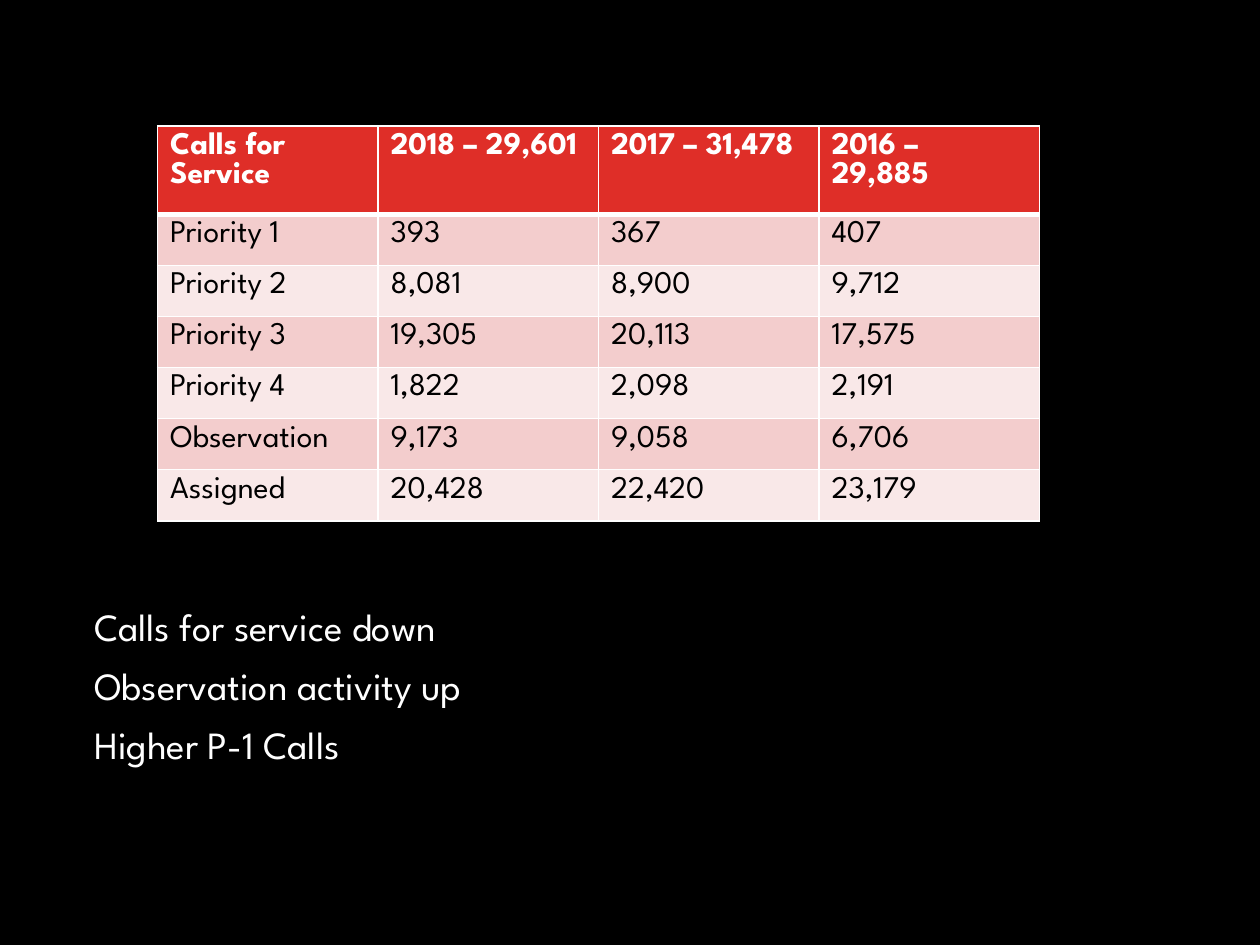
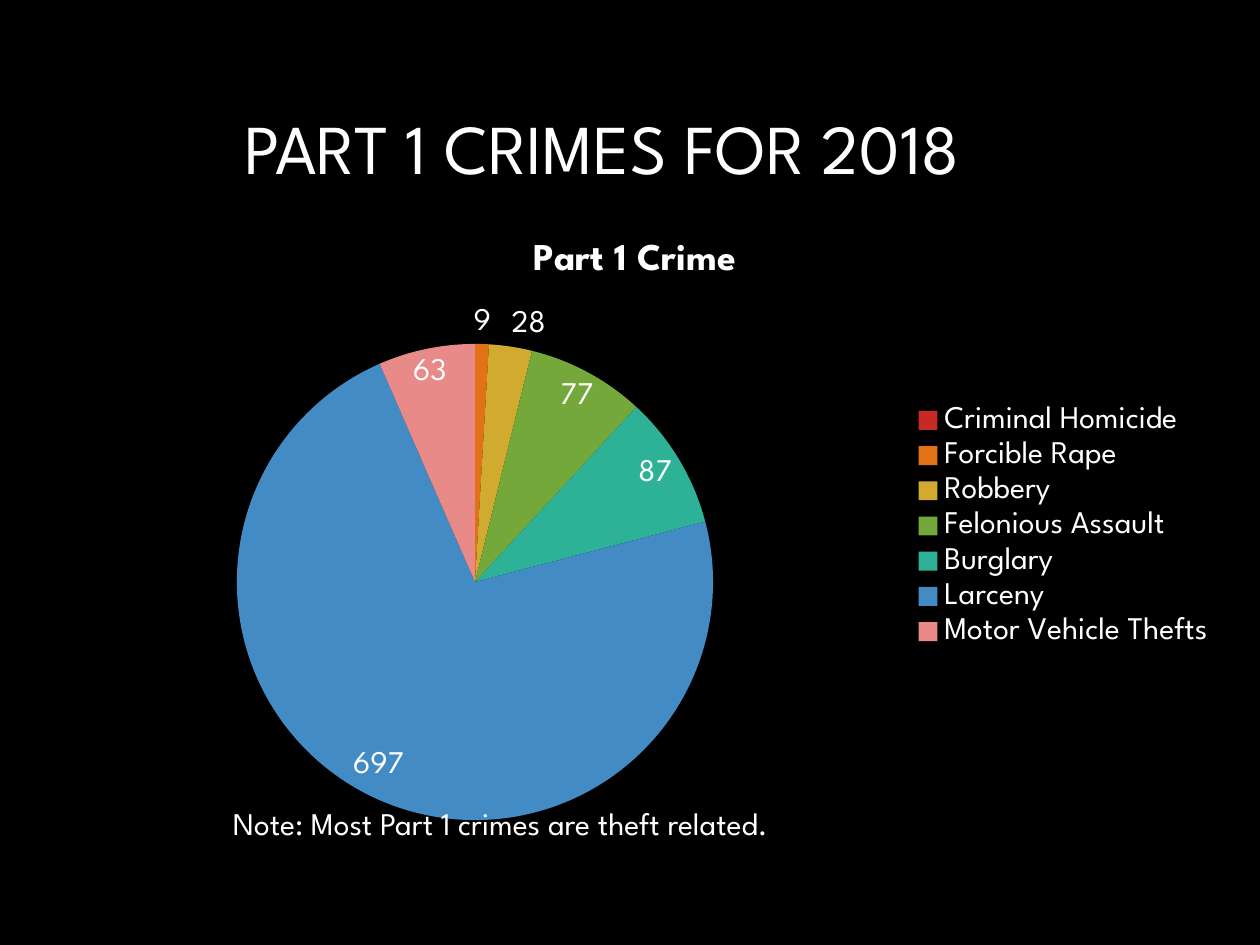
from lxml.etree import SubElement
from pptx import Presentation
from pptx.chart.data import CategoryChartData
from pptx.dml.color import RGBColor
from pptx.enum.chart import XL_CHART_TYPE, XL_LABEL_POSITION, XL_LEGEND_POSITION
from pptx.enum.text import MSO_ANCHOR, PP_ALIGN
from pptx.oxml import parse_xml
from pptx.oxml.ns import nsdecls, qn
from pptx.util import Inches, Pt

FACE = "League Spartan"
BLACK, WHITE, RED = "000000", "FFFFFF", "DF2E28"
BANDS = ["F3CDCD", "F9E8E8"]


def tint(hex):
    return RGBColor.from_string(hex)


def write(frame, text, size=18, color=WHITE, bold=False, align=PP_ALIGN.LEFT,
          line=None, gap=0, anchor=MSO_ANCHOR.TOP):
    frame.word_wrap = True
    frame.vertical_anchor = anchor
    for i, words in enumerate(text.split("\n")):
        para = frame.paragraphs[0] if i == 0 else frame.add_paragraph()
        para.alignment = align
        if line:
            para.line_spacing = line
        if i and gap:
            para.space_before = Pt(gap)
        run = para.add_run()
        run.text = words
        font = run.font
        font.name, font.size, font.bold = FACE, Pt(size), bold
        font.color.rgb = tint(color)


deck = Presentation()
deck.slide_width, deck.slide_height = Inches(10), Inches(7.5)

# Two black slides
pages = []
for _ in range(2):
    page = deck.slides.add_slide(deck.slide_layouts[6])
    page.background.fill.solid()
    page.background.fill.fore_color.rgb = tint(BLACK)
    pages.append(page)
calls, crimes = pages

# Calls for service: remarks
box = calls.shapes.add_textbox(Inches(0.65), Inches(4.78), Inches(8.7), Inches(2.07))
write(box.text_frame,
      "Calls for service down\nObservation activity up\nHigher P-1 Calls",
      size=22, line=0.9, gap=10)

# Calls for service: table, whose header row grows to two lines
rows = [
    ["Calls for Service", "2018 – 29,601", "2017 – 31,478", "2016 –\n29,885"],
    ["Priority 1", "393", "367", "407"],
    ["Priority 2", "8,081", "8,900", "9,712"],
    ["Priority 3", "19,305", "20,113", "17,575"],
    ["Priority 4", "1,822", "2,098", "2,191"],
    ["Observation", "9,173", "9,058", "6,706"],
    ["Assigned", "20,428", "22,420", "23,179"],
]
ROW = Pt(29.2)
table = calls.shapes.add_table(len(rows), 4, Inches(1.25), Inches(1), Inches(7),
                               ROW * len(rows)).table
for r, row in enumerate(rows):
    table.rows[r].height = ROW
    for c, words in enumerate(row):
        cell = table.cell(r, c)
        write(cell.text_frame, words, color=BLACK if r else WHITE, bold=r == 0)
        props = cell._tc.get_or_add_tcPr()
        for side in "LRTB":
            thick = (side, r) in [("B", 0), ("T", 1)]
            edge = SubElement(props, qn("a:ln" + side), w=str(Pt(3 if thick else 1)))
            SubElement(SubElement(edge, qn("a:solidFill")), qn("a:srgbClr"), val=WHITE)
        cell.fill.solid()
        cell.fill.fore_color.rgb = tint(BANDS[(r - 1) % 2] if r else RED)

# Part 1 crimes: title
box = crimes.shapes.add_textbox(Inches(0.17), Inches(0.5), Inches(9.22), Inches(1.41))
write(box.text_frame, "PART 1 CRIMES FOR 2018", size=40, align=PP_ALIGN.CENTER,
      line=0.9, anchor=MSO_ANCHOR.MIDDLE)

# Part 1 crimes: pie
slices = [
    ("Criminal Homicide", 0, "C82924"),
    ("Forcible Rape", 9, "E37217"),
    ("Robbery", 28, "D1AB30"),
    ("Felonious Assault", 77, "74A83B"),
    ("Burglary", 87, "2DB298"),
    ("Larceny", 697, "428BC5"),
    ("Motor Vehicle Thefts", 63, "E88A88"),
]
WIDE, HIGH = 9.42, 4.95
data = CategoryChartData()
data.categories = [name for name, _, _ in slices]
data.add_series("Part 1 Crime", [count for _, count, _ in slices])
chart = crimes.shapes.add_chart(XL_CHART_TYPE.PIE, Inches(0.33), Inches(1.7),
                                Inches(WIDE), Inches(HIGH), data).chart
chart.font.name, chart.font.size = FACE, Pt(18)
chart.font.color.rgb = tint(WHITE)
chart.has_title = True
write(chart.chart_title.text_frame, "Part 1 Crime", size=21.6, bold=True,
      align=PP_ALIGN.CENTER)
chart.chart_title.include_in_layout = False
chart.has_legend = True
chart.legend.position = XL_LEGEND_POSITION.RIGHT
chart.legend.include_in_layout = False

plot = chart.plots[0]
plot.vary_by_categories = True
for i, (_, _, color) in enumerate(slices):
    fill = plot.series[0].points[i].format.fill
    fill.solid()
    fill.fore_color.rgb = tint(color)
plot.has_data_labels = True
labels = plot.data_labels
labels.show_value = True
labels.position = XL_LABEL_POSITION.BEST_FIT
labels.number_format, labels.number_format_is_linked = "0;;", False
labels.font.name, labels.font.size = FACE, Pt(18)
labels.font.color.rgb = tint(WHITE)

# Fix the pie's place as shares of the chart
area = chart._chartSpace.chart.plotArea
for old in area.findall(qn("c:layout")):
    area.remove(old)
SIZE = 3.78
spots = {"x": 1.55 / WIDE, "y": 1.03 / HIGH, "w": SIZE / WIDE, "h": SIZE / HIGH}
layout = parse_xml(f"<c:layout {nsdecls('c')}/>")
manual = SubElement(layout, qn("c:manualLayout"))
SubElement(manual, qn("c:layoutTarget"), val="inner")
for key in "xy":
    SubElement(manual, qn(f"c:{key}Mode"), val="edge")
for key, share in spots.items():
    SubElement(manual, qn("c:" + key), val=str(share))
area.insert(0, layout)

# Part 1 crimes: note
box = crimes.shapes.add_textbox(Inches(1.75), Inches(6.33), Inches(5.42), Inches(0.4))
write(box.text_frame, "Note: Most Part 1 crimes are theft related.")

deck.save("out.pptx")
